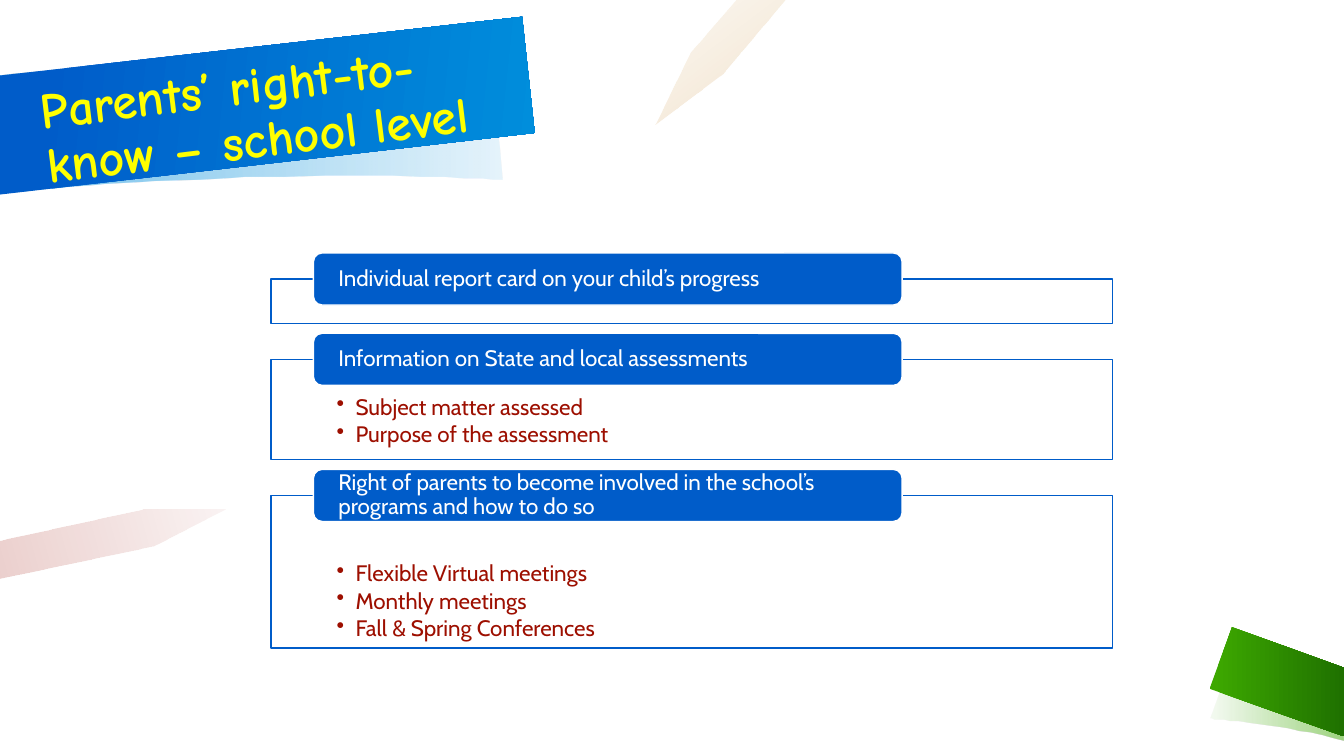
"""Build the slide on parents' right to know at school level."""
from lxml.etree import SubElement
from pptx import Presentation
from pptx.dml.color import RGBColor
from pptx.enum.shapes import MSO_SHAPE as Kind
from pptx.enum.text import MSO_ANCHOR as Anchor, MSO_AUTO_SIZE as Fit, PP_ALIGN as Align
from pptx.oxml.ns import qn
from pptx.util import Pt

BLUE = RGBColor(0x00, 0x5C, 0xC9)
SKY = RGBColor(0x00, 0x8E, 0xDC)
GREEN = RGBColor(0x3D, 0xA8, 0x00)
PINE = RGBColor(0x1F, 0x71, 0x00)
OCHRE = RGBColor(0xC0, 0x74, 0x00)
RED = RGBColor(0x9D, 0x0F, 0x00)
YELLOW = RGBColor(0xFF, 0xFF, 0x00)
WHITE = RGBColor(0xFF, 0xFF, 0xFF)

TITLE = "Parents’ right-to-know – school level"

# heading, bullets, box height, space above the bullets
PANELS = [
    ("Individual report card on your child’s progress", [], 31.7, 26),
    ("Information on State and local assessments",
     ["Subject matter assessed", "Purpose of the assessment"], 71.5, 26),
    ("Right of parents to become involved in the school’s programs and how to do so",
     ["Flexible Virtual meetings", "Monthly meetings", "Fall & Spring Conferences"],
     109, 47.7),
]

# outline (six numbers make a curve), stops (place, colour, opacity), angle
DECOR = [
    ([(865.4, 513.4), (865.4, 513.4, 920.2, 517, 960, 529.2), (960, 481),
      (915.8, 468.7, 881.3, 469.4, 881.3, 469.4)],
     [(0.03, GREEN, 6), (1, GREEN, 50)], 0),
    ([(960, 476.6), (879.8, 447.8), (864, 491.8), (960, 526.3)],
     [(0.03, GREEN, 100), (1, PINE, 100)], 0),
    ([(359.3, 128.2), (350.6, 45.4), (350.6, 45.4, 225.4, 32.4, 0, 54),
      (0, 137.5), (205.9, 117.4, 359.3, 128.2, 359.3, 128.2)],
     [(0, SKY, 10), (0.88, SKY, 50)], 180),
    ([(0, 139), (381.6, 95), (373, 11.5), (0, 54)],
     [(0.09, BLUE, 100), (1, SKY, 100)], 6),
    ([(560.9, 0), (526.3, 0), (493.2, 38.2), (468, 88.6), (515.5, 53.3)],
     [(0, OCHRE, 5), (1, OCHRE, 20)], 53),
    ([(161.3, 363.6), (102.2, 363.6), (0, 385.9), (0, 412.6), (110.2, 389.5)],
     [(0, RED, 5), (1, RED, 20)], 164),
]

BOX_X, BOX_W, TOP, GAP = 193.7, 601.2, 199.3, 25.7
TAB_X, TAB_W, TAB_H = 223.9, 420.5, 37.2
STEPS = 16


def trace(outline):
    """Turn an outline with curves into plain points."""
    points = [outline[0]]
    for part in outline[1:]:
        if len(part) == 2:
            points.append(part)
            continue
        ends = [points[-1], part[:2], part[2:4], part[4:]]
        for step in range(1, STEPS + 1):
            t = step / STEPS
            u = 1 - t
            rates = (u ** 3, 3 * u * u * t, 3 * u * t * t, t ** 3)
            points.append(tuple(sum(r * e[i] for r, e in zip(rates, ends))
                                for i in (0, 1)))
    return points


def fade(shape, levels):
    """Set the opacity of each colour in the fill of a shape."""
    fill = next(e for e in shape._element.spPr
                if e.tag in (qn("a:solidFill"), qn("a:gradFill")))
    for colour, level in zip(fill.iter(qn("a:srgbClr")), levels):
        if level < 100:
            SubElement(colour, qn("a:alpha")).set("val", str(level * 1000))


def draw(shapes, outline, stops, angle):
    """Draw one gradient outline."""
    points = trace(outline)
    pen = shapes.build_freeform(*points[0], scale=Pt(1))
    pen.add_line_segments(points[1:], close=True)
    shape = pen.convert_to_shape()
    shape.shadow.inherit = False
    shape.line.fill.background()
    shape.fill.gradient()
    shape.fill.gradient_angle = -angle % 360
    for stop, (place, colour, _) in zip(shape.fill.gradient_stops, stops):
        stop.position = place
        stop.color.rgb = colour
    fade(shape, [stop[2] for stop in stops])


def block(shapes, kind, area, fill, line, insets, anchor):
    """Add a filled shape with its text frame set up."""
    shape = shapes.add_shape(kind, *map(Pt, area))
    shape.shadow.inherit = False
    shape.fill.solid()
    shape.fill.fore_color.rgb = fill
    shape.line.color.rgb = line
    shape.line.width = Pt(1)
    frame = shape.text_frame
    frame.word_wrap = True
    frame.vertical_anchor = anchor
    side, frame.margin_top, frame.margin_bottom = map(Pt, insets)
    frame.margin_left = frame.margin_right = side
    return shape


def style(para, font, size, colour, bold=False):
    """Format a paragraph and its runs."""
    para.alignment = Align.LEFT
    para.line_spacing = 0.9
    for run in para.runs:
        run.font.name = font
        run.font.size = Pt(size)
        run.font.bold = bold
        run.font.color.rgb = colour


def panel(shapes, top, head, items, height, lead):
    """Add a box with its bullets and the heading tab on its top edge."""
    box = block(shapes, Kind.RECTANGLE, (BOX_X, top, BOX_W, height),
                WHITE, BLUE, (46.8, lead, 8.6), Anchor.TOP)
    fade(box, [90])
    if items:
        box.text_frame.text = "\n".join(items)
        for para in box.text_frame.paragraphs:
            para.level = 1
            para.space_after = Pt(2.4)
            props = para._p.get_or_add_pPr()
            props.set("marL", str(Pt(13.5)))
            props.set("indent", str(-Pt(13.5)))
            SubElement(props, qn("a:buClr")).append(
                props.makeelement(qn("a:srgbClr"), {"val": str(RED)}))
            SubElement(props, qn("a:buChar")).set("char", "•")
            style(para, "Cabin", 16, RED)
    tab = block(shapes, Kind.ROUNDED_RECTANGLE,
                (TAB_X, top - TAB_H / 2, TAB_W, TAB_H),
                BLUE, WHITE, (16, 0, 0), Anchor.MIDDLE)
    tab.text_frame.text = head
    style(tab.text_frame.paragraphs[0], "Cabin", 16, WHITE)


def main():
    """Make the deck."""
    deck = Presentation()
    deck.slide_width, deck.slide_height = Pt(960), Pt(540)
    slide = deck.slides.add_slide(deck.slide_layouts[5])
    shapes = slide.shapes
    for outline, stops, angle in DECOR:
        draw(shapes, outline, stops, angle)
    top = TOP
    for head, items, height, lead in PANELS:
        panel(shapes, top, head, items, height, lead)
        top += height + GAP

    title = shapes.title
    title.left, title.top, title.width, title.height = map(Pt, (23, 28, 345.6, 104.4))
    title.rotation = 353
    frame = title.text_frame
    frame.text = TITLE
    frame.word_wrap = True
    frame.auto_size = Fit.NONE
    frame.vertical_anchor = Anchor.MIDDLE
    style(frame.paragraphs[0], "Comic Neue", 36, YELLOW, True)
    title._element.getparent().append(title._element)
    deck.save("out.pptx")


if __name__ == "__main__":
    main()
